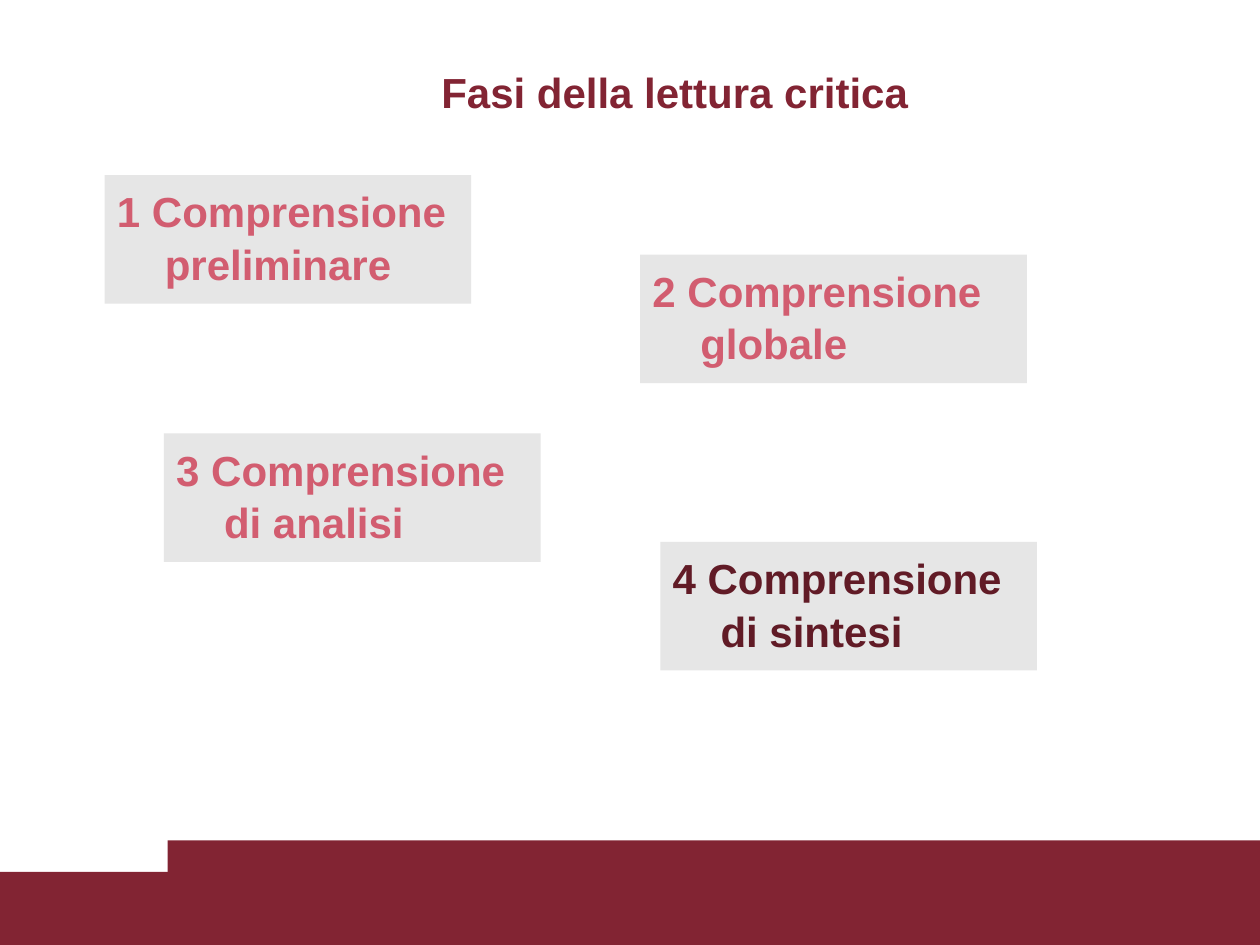
"""Build the slide on the four phases of critical reading."""
import pptx
import pptx.dml.color
import pptx.enum.shapes
import pptx.enum.text
import pptx.util

COLORS = {"band": "822433", "panel": "E6E6E6", "rose": "D25D70", "wine": "611B26"}
COLUMN = pptx.util.Inches(0.01)
ROW = pptx.util.Inches(0.01)


def add_panel(page, left, top, width, height, color):
    panel = page.shapes.add_shape(
        pptx.enum.shapes.MSO_SHAPE.RECTANGLE,
        left * COLUMN, top * ROW, width * COLUMN, height * ROW)
    panel.shadow.inherit = False
    panel.fill.solid()
    panel.fill.fore_color.rgb = pptx.dml.color.RGBColor.from_string(COLORS[color])
    panel.line.fill.background()
    return panel


def write_text(box, text, color, alignment, anchor):
    frame = box.text_frame
    frame.word_wrap = True
    frame.vertical_anchor = anchor
    para = frame.paragraphs[0]
    para.text = text
    para.alignment = alignment
    para.font.name = "Arial"
    para.font.size = pptx.util.Pt(24)
    para.font.bold = True
    para.font.color.rgb = pptx.dml.color.RGBColor.from_string(COLORS[color])
    return para


deck = pptx.Presentation()
deck.slide_width = 1000 * COLUMN
deck.slide_height = 750 * ROW
page = deck.slides.add_slide(deck.slide_layouts[6])

for left, top in [(0, 692), (133, 667)]:
    add_panel(page, left, top, 1000 - left, 750 - top, "band")

title = page.shapes.add_textbox(122 * COLUMN, 45 * ROW, 827 * COLUMN, 55 * ROW)
write_text(title, "Fasi della lettura critica", "band",
           pptx.enum.text.PP_ALIGN.CENTER, pptx.enum.text.MSO_ANCHOR.MIDDLE)

phases = [
    ("1 Comprensione preliminare", 83, 139, 291, "rose"),
    ("2 Comprensione globale", 508, 202, 307, "rose"),
    ("3 Comprensione di analisi", 130, 344, 299, "rose"),
    ("4 Comprensione di sintesi", 524, 430, 299, "wine"),
]
for text, left, top, width, color in phases:
    panel = add_panel(page, left, top, width, 102, "panel")
    panel.text_frame.margin_top = 7 * ROW
    para = write_text(panel, text, color,
                      pptx.enum.text.PP_ALIGN.LEFT, pptx.enum.text.MSO_ANCHOR.TOP)
    para.line_spacing = 1.04
    properties = para._p.get_or_add_pPr()
    properties.set("marL", str(int(38 * COLUMN)))
    properties.set("indent", str(int(-38 * COLUMN)))

deck.save("out.pptx")
